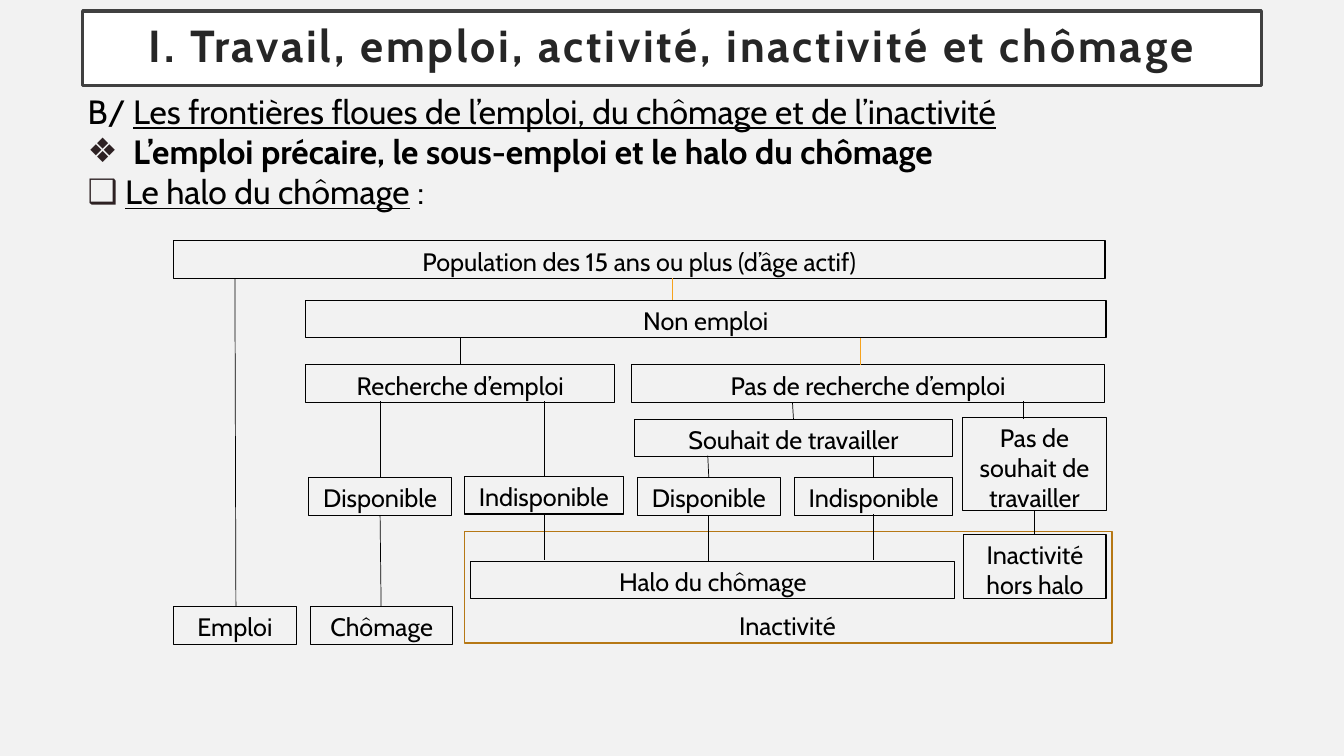
from dataclasses import dataclass

from lxml import etree
from pptx import Presentation
from pptx.dml.color import RGBColor
from pptx.enum.shapes import MSO_CONNECTOR, MSO_SHAPE
from pptx.enum.text import MSO_ANCHOR, MSO_AUTO_SIZE, PP_ALIGN
from pptx.oxml.ns import qn
from pptx.util import Inches, Pt

RECT = MSO_SHAPE.RECTANGLE
LINE = MSO_CONNECTOR.STRAIGHT
TOP, MIDDLE = MSO_ANCHOR.TOP, MSO_ANCHOR.MIDDLE
FIXED = MSO_AUTO_SIZE.NONE
CENTER, JUSTIFY = PP_ALIGN.CENTER, PP_ALIGN.JUSTIFY

FONT = "Cabin"
HEX = {"page": "F2F2F2", "white": "FFFFFF", "frame": "404040", "title": "262626",
       "ink": "000000", "mark": "2D2123", "amber": "F6A21D", "zone": "B67815"}
ROW = 0.37  # height of a one-line box


@dataclass
class Box:
    text: str
    left: float
    top: float
    width: float
    height: float = ROW
    tint: str = "ink"
    weight: float = 0.75


@dataclass
class Link:
    x: float
    top: float
    end: float
    tint: str = "ink"
    slant: float = 0


@dataclass
class Phrase:
    text: str
    bold: bool = False
    under: bool = False


@dataclass
class Item:
    words: list[Phrase]
    mark: str = ""
    indent: float = 0


ITEMS = [
    Item([Phrase("B/ "),
          Phrase("Les frontières floues de l’emploi, du chômage et de l’inactivité", under=True)]),
    Item([Phrase("L’emploi précaire, le sous-emploi et le halo du chômage", bold=True)], "❖", 0.45),
    Item([Phrase("Le halo du chômage", under=True), Phrase(" :")], "❑", 0.37),
]

BOXES = [
    Box("Population des 15 ans ou plus (d’âge actif)", 1.72, 2.39, 9.24),
    Box("Non emploi", 3.03, 2.98, 7.94),
    Box("Emploi", 1.72, 6.02, 1.22),
    Box("Recherche d’emploi", 3.03, 3.62, 3.07),
    Box("Pas de recherche d’emploi", 6.26, 3.62, 4.7),
    Box("Souhait de travailler", 6.29, 4.16, 3.16),
    Box("Pas de souhait de travailler", 9.55, 4.14, 1.42, 0.92),
    Box("Chômage", 3.08, 6.02, 1.41),
    Box("Disponible", 3.06, 4.74, 1.42),
    Box("Indisponible", 4.61, 4.73, 1.57),
    Box("Disponible", 6.32, 4.74, 1.42),
    Box("Indisponible", 7.88, 4.74, 1.57),
    Box("Inactivité hors halo", 9.56, 5.3, 1.41, 0.64),
    Box("Halo du chômage", 4.67, 5.57, 4.8),
    Box("", 4.61, 5.27, 6.42, 1.11, "zone", 1),
]

LINKS = [
    Link(2.33, 2.76, 6.02, slant=0.01),
    Link(6.67, 2.76, 2.98, "amber"),
    Link(4.57, 3.35, 3.62),
    Link(8.53, 3.35, 3.62, "amber"),
    Link(3.77, 3.98, 4.74),
    Link(5.4, 3.98, 4.73),
    Link(3.77, 5.11, 6.02, slant=0.01),
    Link(7.86, 3.99, 4.16, slant=0.01),
    Link(10.15, 3.98, 4.16),
    Link(7.02, 4.52, 4.74, slant=0.01),
    Link(8.66, 4.52, 4.74),
    Link(10.26, 5.06, 5.3),
    Link(5.4, 5.1, 5.56),
    Link(7.03, 5.12, 5.58),
    Link(8.66, 5.1, 5.56),
]


def color(name: str) -> RGBColor:
    return RGBColor.from_string(HEX[name])


def style(run, size: float, tint: str = "ink", bold: bool = False, under: bool = False) -> None:
    font = run.font
    font.name, font.size, font.bold, font.underline = FONT, Pt(size), bold, under
    font.color.rgb = color(tint)


def place(shape, left: float, top: float, width: float, height: float) -> None:
    shape.left, shape.top = Inches(left), Inches(top)
    shape.width, shape.height = Inches(width), Inches(height)


def stroke(line, tint: str, weight: float) -> None:
    line.color.rgb = color(tint)
    line.width = Pt(weight)


def set_mark(para, mark: str, indent: float) -> None:
    props = para._p.get_or_add_pPr()
    props.set("marL", str(Inches(indent)))
    props.set("indent", str(-Inches(indent)))
    if not mark:
        etree.SubElement(props, qn("a:buNone"))
        return
    tint = etree.SubElement(props, qn("a:buClr"))
    etree.SubElement(tint, qn("a:srgbClr")).set("val", HEX["mark"])
    etree.SubElement(props, qn("a:buChar")).set("char", mark)


def write(shape, text: str) -> None:
    frame = shape.text_frame
    frame.word_wrap, frame.auto_size = True, FIXED
    frame.vertical_anchor = TOP
    frame.text = text
    para = frame.paragraphs[0]
    para.alignment = CENTER
    for run in para.runs:
        style(run, 18)


def draw_title(shape) -> None:
    place(shape, 0.82, 0.11, 11.69, 0.74)
    shape.fill.solid()
    shape.fill.fore_color.rgb = color("white")
    stroke(shape.line, "frame", 2.5)
    frame = shape.text_frame
    frame.text = "I. Travail, emploi, activité, inactivité et chômage"
    frame.auto_size, frame.vertical_anchor = FIXED, MIDDLE
    frame.margin_left = frame.margin_right = Inches(0.2)
    frame.margin_top = frame.margin_bottom = Inches(0.2)
    para = frame.paragraphs[0]
    para.alignment, para.line_spacing = CENTER, 0.9
    run = para.runs[0]
    style(run, 32, "title", bold=True)
    run.font._element.set("spc", "200")


def draw_list(shape, items: list[Item]) -> None:
    place(shape, 0.77, 0.85, 11.69, 5.81)
    frame = shape.text_frame
    frame.auto_size, frame.vertical_anchor = FIXED, TOP
    for i, item in enumerate(items):
        para = frame.add_paragraph() if i else frame.paragraphs[0]
        para.alignment, para.line_spacing = JUSTIFY, 1.0
        para.space_before = para.space_after = Pt(0)
        set_mark(para, item.mark, item.indent)
        for phrase in item.words:
            run = para.add_run()
            run.text = phrase.text
            style(run, 24, bold=phrase.bold, under=phrase.under)


def draw_box(slide, box: Box) -> None:
    shape = slide.shapes.add_shape(RECT, 0, 0, 0, 0)
    place(shape, box.left, box.top, box.width, box.height)
    shape.shadow.inherit = False
    shape.fill.background()
    stroke(shape.line, box.tint, box.weight)
    if box.text:
        write(shape, box.text)


def draw_link(slide, link: Link) -> None:
    line = slide.shapes.add_connector(LINE, Inches(link.x), Inches(link.top),
                                      Inches(link.x + link.slant), Inches(link.end))
    stroke(line.line, link.tint, 0.5)
    etree.SubElement(line._element.spPr, qn("a:effectLst"))


def main() -> None:
    deck = Presentation()
    deck.slide_width, deck.slide_height = Inches(13.33), Inches(7.5)
    slide = deck.slides.add_slide(deck.slide_layouts[1])
    slide.background.fill.solid()
    slide.background.fill.fore_color.rgb = color("page")

    # Title and list
    draw_title(slide.shapes.title)
    draw_list(slide.placeholders[1], ITEMS)

    # Tree of boxes, with the label of the lower zone
    for box in BOXES:
        draw_box(slide, box)
    label = slide.shapes.add_textbox(Inches(4.65), Inches(6.01), Inches(6.32), Inches(ROW))
    write(label, "Inactivité")

    # Links between the boxes
    for link in LINKS:
        draw_link(slide, link)
    deck.save("out.pptx")


if __name__ == "__main__":
    main()
